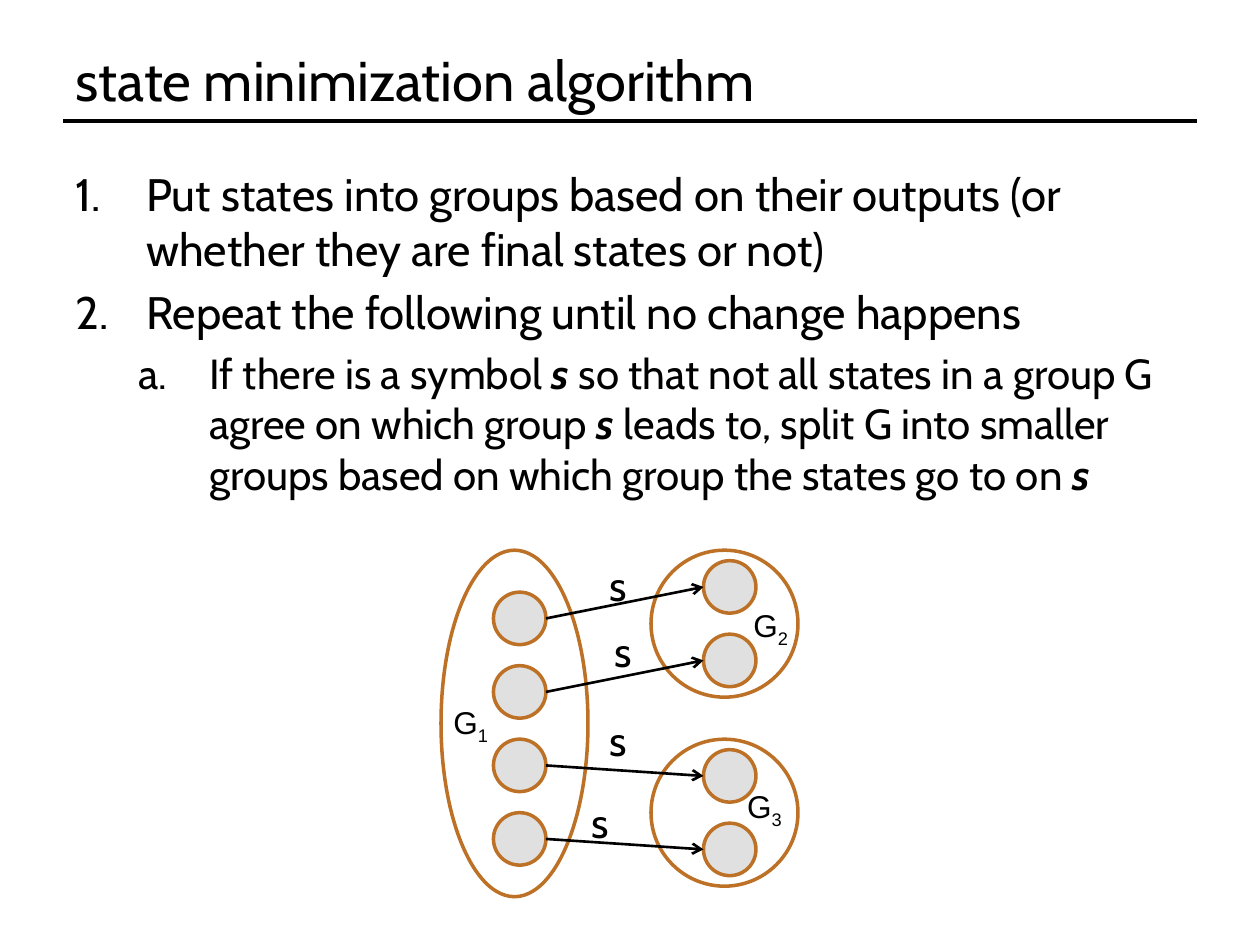
from collections import namedtuple

from lxml.etree import SubElement
from pptx import Presentation
from pptx.dml.color import RGBColor
from pptx.enum.shapes import MSO_CONNECTOR, MSO_SHAPE
from pptx.enum.text import MSO_ANCHOR, MSO_AUTO_SIZE, PP_ALIGN
from pptx.oxml.ns import qn
from pptx.util import Pt

Box = namedtuple("Box", "left top width height")
BLACK, STATE_FILL, OUTLINE = "000000", "E0E0E0", "BD7126"
STATE_SIZE, STATE_STEP = 30, 42


def color(value):
    """Turn a hex string into a colour."""
    return RGBColor.from_string(value)


def points(box):
    """Give the four lengths of a box in points."""
    return [Pt(length) for length in box]


def add_span(para, text, size, font="Cabin", emphasis=None, baseline=None):
    """Add one formatted run to a paragraph."""
    span = para.add_run()
    span.text = text
    span.font.size, span.font.name = Pt(size), font
    span.font.bold = span.font.italic = emphasis
    span.font.color.rgb = color(BLACK)
    if baseline is not None:
        span.font._element.set("baseline", str(baseline))


def add_line(page, start, end, width, arrow=False):
    """Draw a straight black line, with an arrowhead at its end if asked."""
    line = page.shapes.add_connector(
        MSO_CONNECTOR.STRAIGHT, *points(start), *points(end))
    line.line.color.rgb = color(BLACK)
    line.line.width = Pt(width)
    if arrow:
        SubElement(line.line._get_or_add_ln(), qn("a:tailEnd"), type="arrow")
    SubElement(line._element.spPr, qn("a:effectLst"))


def add_ellipse(page, box, fill=None):
    """Draw an outlined ellipse, hollow unless a fill is given."""
    ellipse = page.shapes.add_shape(MSO_SHAPE.OVAL, *points(box))
    ellipse.shadow.inherit = False
    if fill:
        ellipse.fill.solid()
        ellipse.fill.fore_color.rgb = color(fill)
    else:
        ellipse.fill.background()
    ellipse.line.color.rgb = color(OUTLINE)
    ellipse.line.width = Pt(2)


def add_label(page, box):
    """Add an unwrapped label box and return its paragraph."""
    frame = page.shapes.add_textbox(*points(box)).text_frame
    frame.word_wrap = False
    frame.auto_size = MSO_AUTO_SIZE.SHAPE_TO_FIT_TEXT
    return frame.paragraphs[0]


def add_title(page, box, text):
    """Fill the title placeholder and rule a line below it."""
    title = page.shapes.title
    title.left, title.top, title.width, title.height = points(box)
    title.text_frame.vertical_anchor = MSO_ANCHOR.MIDDLE
    para = title.text_frame.paragraphs[0]
    para.alignment = PP_ALIGN.LEFT
    add_span(para, text, 32)
    bottom = box.top + box.height
    add_line(page, (box.left, bottom), (box.left + box.width, bottom), 2)


def add_steps(page, box, steps):
    """Write the numbered steps, with symbols in bold italics."""
    frame = page.shapes.add_textbox(*points(box)).text_frame
    frame.word_wrap = True
    for index, (level, numbering, spans) in enumerate(steps):
        para = frame.add_paragraph() if index else frame.paragraphs[0]
        para.level = level
        para.space_before = Pt(5)
        properties = para._p.get_or_add_pPr()
        properties.set("marL", str(Pt(40.5 + 36 * level)))
        properties.set("indent", str(Pt(-40.5)))
        SubElement(properties, qn("a:buFont"), typeface="+mj-lt")
        SubElement(properties, qn("a:buAutoNum"), type=numbering)
        for text in spans:
            add_span(para, text, 26 - 2 * level, emphasis=text == "s")


def add_group(page, box, inset, count, number, label_offset):
    """Draw a group of states with its label and return the state boxes."""
    states = [Box(box.left + 30, box.top + inset + STATE_STEP * index,
                  STATE_SIZE, STATE_SIZE) for index in range(count)]
    for state in states:
        add_ellipse(page, state, STATE_FILL)
    add_ellipse(page, box)
    across, down = label_offset
    para = add_label(page, Box(box.left + across, box.top + down, 35, 29))
    add_span(para, "G", 18, "Arial")
    add_span(para, number, 18, "Arial", baseline=-25000)
    return states


def add_diagram(page, box):
    """Draw group 1 with its transitions into groups 2 and 3."""
    size = 84
    right = box.left + box.width - size
    sources = add_group(page, Box(box.left, box.top, size, box.height),
                        24, 4, "1", (0, 83.8))
    targets = add_group(page, Box(right, box.top, size, size),
                        6, 2, "2", (51.4, 28.3))
    targets += add_group(page, Box(right, box.top + 108, size, size),
                         6, 2, "3", (47.8, 24))
    symbol_offsets = [(89.3, 1.7), (92.2, 39.8), (89.3, 90.2), (79.2, 137)]
    middle = STATE_SIZE / 2
    for source, target, (across, down) in zip(sources, targets, symbol_offsets):
        add_line(page, (source.left + STATE_SIZE, source.top + middle),
                 (target.left, target.top + middle), 1.5, arrow=True)
        symbol = add_label(page, Box(box.left + across, box.top + down, 25, 36))
        add_span(symbol, "s", 24)


def main():
    """Build the slide and save the deck."""
    deck = Presentation()
    deck.slide_width, deck.slide_height = Pt(720), Pt(540)
    page = deck.slides.add_slide(deck.slide_layouts[5])
    add_title(page, Box(36, 21.6, 648, 47.5), "state minimization algorithm")
    add_steps(page, Box(36, 91.4, 648, 270), [
        (0, "arabicPeriod", ["Put states into groups based on their outputs "
                             "(or whether they are final states or not)"]),
        (0, "arabicPeriod", ["Repeat the following until no change happens"]),
        (1, "alphaLcPeriod", [
            "If there is a symbol ", "s",
            " so that not all states in a group G agree on which group ", "s",
            " leads to, split G into smaller groups based on which group "
            "the states go to on ", "s"]),
    ])
    add_diagram(page, Box(252, 314.4, 204, 198))
    deck.save("out.pptx")


if __name__ == "__main__":
    main()
